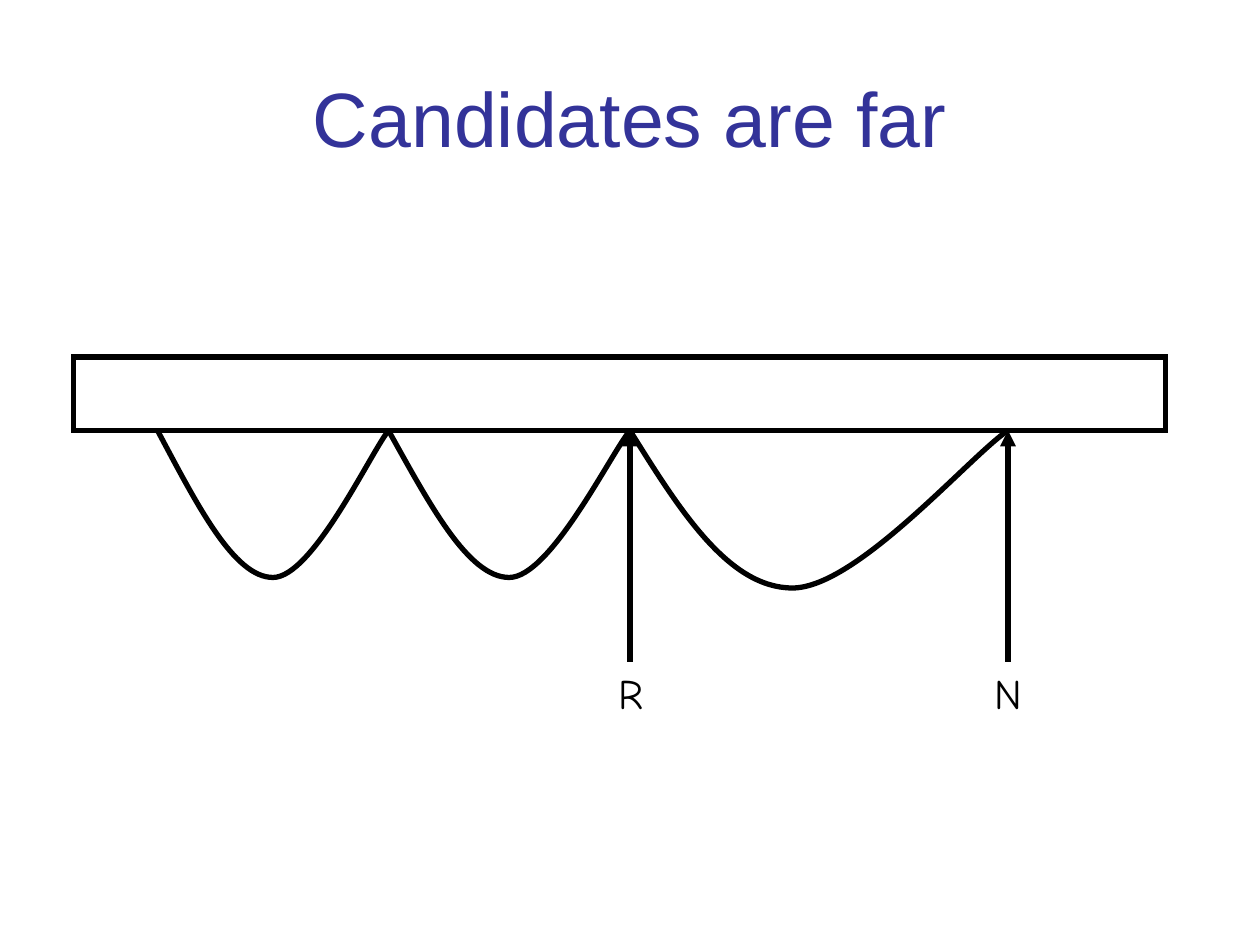
from pptx import Presentation
from pptx.dml.color import RGBColor
from pptx.enum.shapes import MSO_CONNECTOR, MSO_SHAPE
from pptx.enum.text import MSO_ANCHOR, MSO_AUTO_SIZE, PP_ALIGN
from pptx.oxml.ns import qn
from pptx.util import Inches, Pt
from lxml.etree import SubElement

BLACK = RGBColor(0, 0, 0)
BLUE = RGBColor(0x33, 0x33, 0x99)
CELL = Inches(1) // 12  # the slide is a grid of 120 columns by 90 rows

# Arc points as shares of the width: two pulls, the low point, two pulls
EVEN = (0.17, 0.33, 0.5, 0.67, 0.92)
SKEW = (0.13, 0.26, 0.43, 0.6, 0.9)
DROP = (0.5, 1, 1, 1, 0.16)  # the same points as shares of the depth


def grid(*cells):
    return [round(n * CELL) for n in cells]


def ink(line):
    line.color.rgb = BLACK
    line.width = Pt(3)


def style(para, align, font, size, color):
    para.alignment = align
    para._p.get_or_add_pPr().set("rtl", "1")
    run = para.runs[0]
    run.font.name = font
    run.font.size = Pt(size)
    run.font.color.rgb = color


def add_title(slide, box, text):
    title = slide.shapes.title
    title.left, title.top, title.width, title.height = grid(*box)
    frame = title.text_frame
    frame.text = text
    frame.vertical_anchor = MSO_ANCHOR.MIDDLE
    style(frame.paragraphs[0], PP_ALIGN.CENTER, "Arial", 44, BLUE)


def add_bar(slide, box):
    bar = slide.shapes.add_shape(MSO_SHAPE.RECTANGLE, *grid(*box))
    bar.fill.background()
    bar.shadow.inherit = False
    ink(bar.line)
    SubElement(bar.line._get_or_add_ln(), qn("a:miter"), lim="800000")


def bend(shape):
    """Turn each three straight segments into one cubic curve."""
    lines = list(shape._element.iter(qn("a:lnTo")))
    for start in range(0, len(lines), 3):
        trio = lines[start:start + 3]
        cubic = SubElement(trio[0].getparent(), qn("a:cubicBezTo"))
        for line in trio:
            cubic.append(line[0])
            line.getparent().remove(line)


def add_arc(slide, box, shares):
    """Two curves that hang from the top corners of the box."""
    left, top, width, depth = box
    dots = [grid(left + x * width, top + y * depth)
            for x, y in zip((*shares, 1), (*DROP, 0))]
    path = slide.shapes.build_freeform(*grid(left, top))
    path.add_line_segments(dots, close=False)
    arc = path.convert_to_shape()
    bend(arc)
    arc.fill.background()
    arc.shadow.inherit = False
    ink(arc.line)


def add_mark(slide, col, top, foot, text, wide):
    """An arrow up to the bar, with its letter below."""
    arrow = slide.shapes.add_connector(
        MSO_CONNECTOR.STRAIGHT, *grid(col, foot, col, top))
    ink(arrow.line)
    SubElement(arrow.line._get_or_add_ln(), qn("a:tailEnd"), type="triangle")
    SubElement(arrow._element.spPr, qn("a:effectLst"))

    label = slide.shapes.add_textbox(*grid(col + 2.5 - wide, foot, wide, 6))
    frame = label.text_frame
    frame.word_wrap = True
    frame.auto_size = MSO_AUTO_SIZE.SHAPE_TO_FIT_TEXT
    frame.text = text
    style(frame.paragraphs[0], PP_ALIGN.RIGHT, "Comic Neue", 24, BLACK)


def main():
    deck = Presentation()
    deck.slide_width, deck.slide_height = grid(120, 90)
    slide = deck.slides.add_slide(deck.slide_layouts[5])
    add_title(slide, (6, 3.6, 108, 15), "Candidates are far")

    # Bar, and two even arcs that hang from its lower edge
    add_bar(slide, (7, 34, 104, 7))
    edge, near, far = 41, 60, 96
    for left, width in ((15, 22), (37, 23)):
        add_arc(slide, (left, edge, width, 14), EVEN)

    # Arrows, and the skewed arc between them
    for col, text, wide in ((near, "R", 4.5), (far, "N", 7.5)):
        add_mark(slide, col, edge, 63, text, wide)
    add_arc(slide, (near, edge, far - near, 15), SKEW)

    deck.save("out.pptx")


if __name__ == "__main__":
    main()
